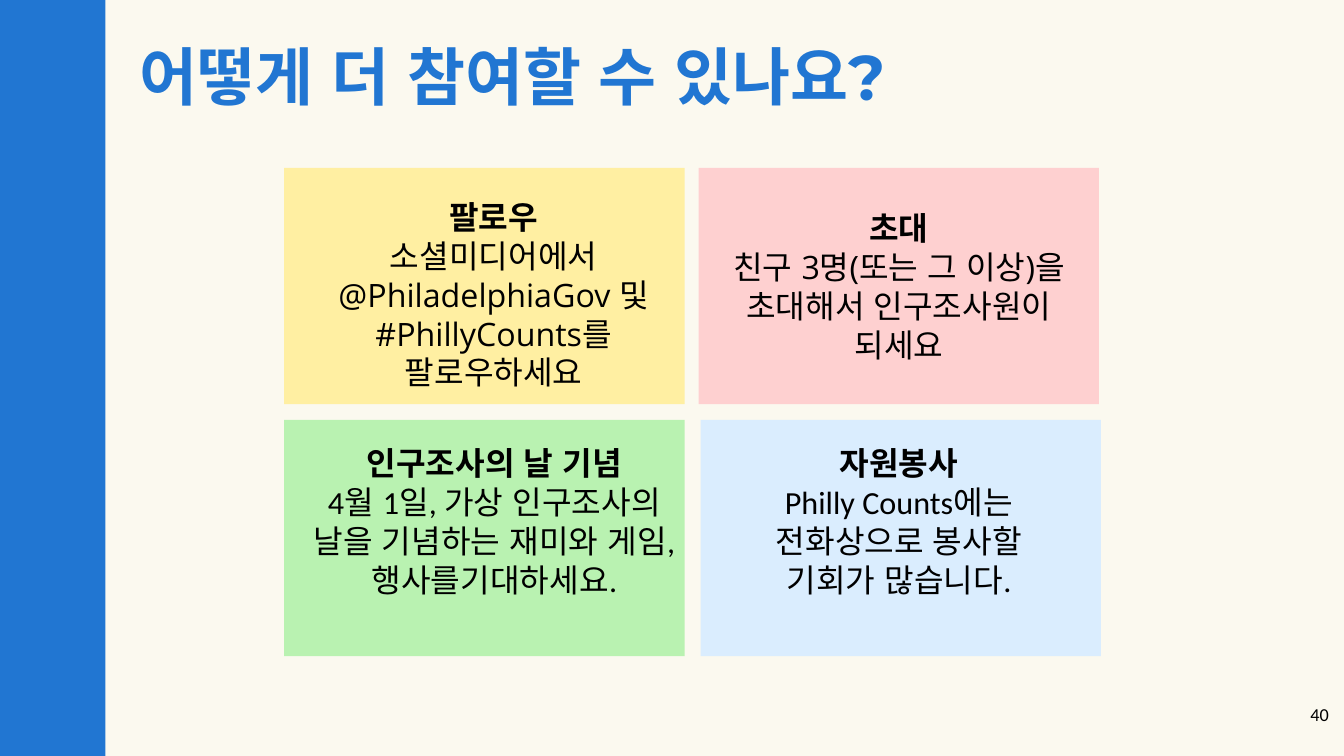
from dataclasses import dataclass

from lxml.etree import SubElement
from pptx import Presentation
from pptx.dml.color import RGBColor
from pptx.enum.lang import MSO_LANGUAGE_ID
from pptx.enum.shapes import MSO_SHAPE
from pptx.enum.text import PP_ALIGN
from pptx.oxml.ns import qn
from pptx.util import Pt


@dataclass(frozen=True)
class Theme:
    background: str = "FBF9EF"
    blue: str = "2176D2"
    black: str = "000000"
    yellow: str = "FFEFA2"
    pink: str = "FED0D0"
    green: str = "B9F2B1"
    sky: str = "DAEDFE"
    title_size: float = 45
    body_size: float = 23
    number_size: float = 13
    title_line: float = 58.5
    body_line: float = 27.7
    korean: str = "Noto Sans CJK KR"


THEME = Theme()
CARD_W, CARD_H = 286, 168.75

# Card: left, top, colour; text: left, top, width, height; font, heading, message
CARDS = [
    (203, 120, THEME.yellow, (224.6, 137.5, 256.3, 157.7), "Open Sans",
     "팔로우", "소셜미디어에서 @PhiladelphiaGov 및 #PhillyCounts를 팔로우하세요"),
    (499, 120, THEME.pink, (514, 145.4, 256.3, 118.8), "Open Sans",
     "초대", "친구 3명(또는 그 이상)을 초대해서 인구조사원이 되세요"),
    (203, 300, THEME.green, (205.2, 313.2, 295.9, 118.8), "Calibri",
     "인구조사의 날 기념",
     "4월 1일, 가상 인구조사의 날을 기념하는 재미와 게임, 행사를기대하세요."),
    (500.4, 300, THEME.sky, (514, 313.2, 256.3, 118.8), "Calibri",
     "자원봉사", "Philly Counts에는 전화상으로 봉사할 기회가 많습니다."),
]


def add_block(s, left, top, width, height, color):
    sp = s.shapes.add_shape(MSO_SHAPE.RECTANGLE, Pt(left), Pt(top), Pt(width), Pt(height))
    sp.shadow.inherit = False
    sp.fill.solid()
    sp.fill.fore_color.rgb = RGBColor.from_string(color)
    sp.line.fill.background()


def add_box(s, left, top, width, height):
    tf = s.shapes.add_textbox(Pt(left), Pt(top), Pt(width), Pt(height)).text_frame
    tf.word_wrap = True
    return tf


def write(p, text, *, font, size, color=THEME.black, bold=False,
          align=PP_ALIGN.LEFT, line=None):
    p.alignment = align
    if line:
        p.line_spacing = Pt(line)
    r = p.add_run()
    r.text = text
    r.font.name = font
    r.font.size = Pt(size)
    r.font.bold = bold
    r.font.color.rgb = RGBColor.from_string(color)
    r.font.language_id = MSO_LANGUAGE_ID.KOREAN
    # East Asian typeface for the Korean letters
    SubElement(r.font._element, qn("a:ea")).set("typeface", THEME.korean)


def add_card(s, left, top, color, text_area, font, heading, message):
    add_block(s, left, top, CARD_W, CARD_H, color)
    tf = add_box(s, *text_area)
    style = dict(font=font, size=THEME.body_size, align=PP_ALIGN.CENTER,
                 line=THEME.body_line)
    write(tf.paragraphs[0], heading, bold=True, **style)
    write(tf.add_paragraph(), message, **style)


def main():
    prs = Presentation()
    prs.slide_width, prs.slide_height = Pt(960), Pt(540)
    s = prs.slides.add_slide(prs.slide_layouts[6])
    s.background.fill.solid()
    s.background.fill.fore_color.rgb = RGBColor.from_string(THEME.background)

    # Side bar and title
    add_block(s, 0, 0, 75.4, 540, THEME.blue)
    title = add_box(s, 92.9, 18.7, 860, 62)
    write(title.paragraphs[0], "어떻게 더 참여할 수 있나요?", font="Montserrat",
          size=THEME.title_size, color=THEME.blue, bold=True, line=THEME.title_line)

    # Four ways to take part
    for card in CARDS:
        add_card(s, *card)

    # Page number
    number = add_box(s, 898.6, 499, 57.6, 41)
    write(number.paragraphs[0], "40", font="Calibri", size=THEME.number_size,
          align=PP_ALIGN.RIGHT)

    prs.save("out.pptx")


if __name__ == "__main__":
    main()
